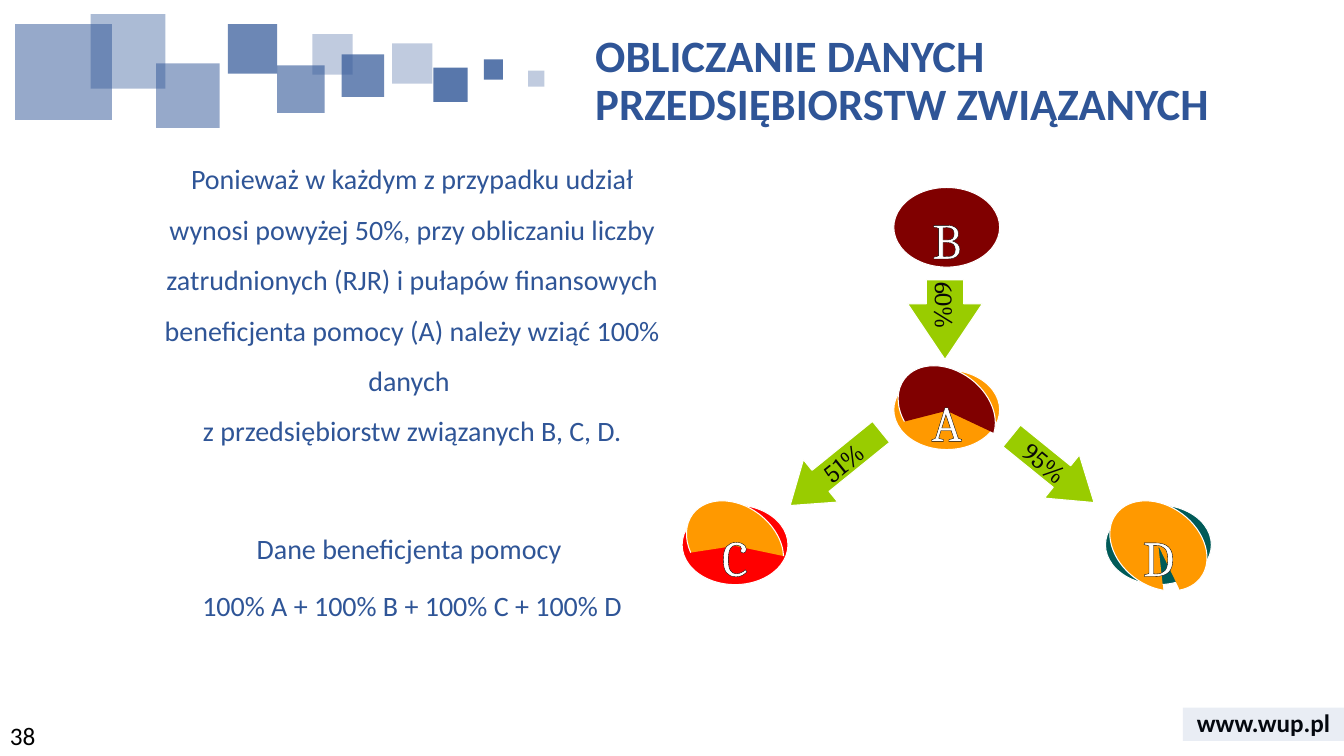
import math

import pptx
import pptx.dml.color
import pptx.enum.shapes
import pptx.enum.text
import pptx.oxml.ns
import pptx.util
from lxml import etree

CELL = pptx.util.Inches(0.1)  # the slide is a grid of tenth-inch cells
NAVY, LIME, AMBER, MAROON = "2F5597", "99CC00", "FF9900", "800000"
WHITE, BLACK = "FFFFFF", "000000"
SHAPES = pptx.enum.shapes.MSO_SHAPE
CENTER = pptx.enum.text.PP_ALIGN.CENTER
MIDDLE = pptx.enum.text.MSO_ANCHOR.MIDDLE
TOP = pptx.enum.text.MSO_ANCHOR.TOP
qn = pptx.oxml.ns.qn


def paint(fill, color):
    """Solid colour for a shape's, a line's or a font's fill."""
    fill.solid()
    fill.fore_color.rgb = pptx.dml.color.RGBColor.from_string(color)


def write(paragraph, text, size, color, face="Calibri", bold=False):
    run = paragraph.add_run()
    run.text = text
    run.font.size = pptx.util.Pt(size)
    run.font.name = face
    run.font.bold = bold
    paint(run.font.fill, color)
    return run


presentation = pptx.Presentation()
presentation.slide_width = int(133.33 * CELL)
presentation.slide_height = 75 * CELL
slide = presentation.slides.add_slide(presentation.slide_layouts[5])
shapes = slide.shapes

# Web address in the corner
address = shapes.add_textbox(*(int(v * CELL) for v in (117.35, 69.7, 16, 4)))
address.text_frame.word_wrap = True
address.text_frame.vertical_anchor = MIDDLE
paragraph = address.text_frame.paragraphs[0]
paragraph.alignment = CENTER
write(paragraph, "www.wup.pl", 18, BLACK, bold=True)

# Translucent squares and the address band: left, top, width, height, opacity
for *box, opacity in [
    (38.9, 4.3, 4, 4, 30), (43, 6.7, 3.4, 3.4, 80), (33.9, 5.4, 4.2, 4.2, 70),
    (1.5, 2.4, 9.6, 9.5, 50), (27.5, 6.5, 4.7, 4.7, 60), (15.5, 6.3, 6.3, 6.4, 50),
    (9, 1.4, 7.4, 7.4, 40), (48, 5.9, 1.9, 2, 80), (22.6, 2.4, 4.9, 4.9, 70),
    (31, 3.4, 4, 4, 30), (52.4, 7, 1.6, 1.6, 30), (117.35, 70.2, 16, 3.3, 10),
]:
    square = shapes.add_shape(SHAPES.RECTANGLE, *(int(v * CELL) for v in box))
    square.shadow.inherit = False
    paint(square.fill, NAVY)
    square.line.fill.background()
    rgb = square._element.spPr.find(qn("a:solidFill")).find(qn("a:srgbClr"))
    etree.SubElement(rgb, qn("a:alpha")).set("val", str(opacity * 1000))

# Title
title = shapes.title
title.left, title.top, title.width, title.height = (
    int(v * CELL) for v in (58.05, 2.85, 90.3, 7.9))
title.text_frame.vertical_anchor = TOP
title.text_frame.auto_size = pptx.enum.text.MSO_AUTO_SIZE.NONE
paragraph = title.text_frame.paragraphs[0]
paragraph.alignment = pptx.enum.text.PP_ALIGN.LEFT
paragraph.line_spacing = 0.9
write(paragraph, "OBLICZANIE DANYCH ", 32, NAVY, bold=True)
paragraph.add_line_break()
write(paragraph, "PRZEDSIĘBIORSTW ZWIĄZANYCH", 32, NAVY, bold=True)

# Explanation: space before, lines of the paragraph
body = shapes.add_textbox(*(int(v * CELL) for v in (14.1, 13.9, 53.6, 52)))
body.text_frame.word_wrap = True
for index, (space, lines) in enumerate([
    (0, ["Ponieważ w każdym z przypadku udział wynosi powyżej 50%, przy obliczaniu "
         "liczby zatrudnionych (RJR) i pułapów finansowych beneficjenta pomocy (A) "
         "należy wziąć 100% danych ",
         "z przedsiębiorstw związanych B, C, D."]),
    (48, ["Dane beneficjenta pomocy "]),
    (4.5, ["100% A + 100% B + 100% C + 100% D"]),
]):
    frame = body.text_frame
    paragraph = frame.add_paragraph() if index else frame.paragraphs[0]
    paragraph.alignment = CENTER
    paragraph.line_spacing = 1.5
    paragraph.space_before = pptx.util.Pt(space)
    for number, line in enumerate(lines):
        if number:
            paragraph.add_line_break()
        write(paragraph, line, 20, NAVY)

# Companies: centre, colour, owner's share as a colour and an arc in degrees
companies = {
    "A": (93.92, 40.65, AMBER, MAROON, 239, 15.5),
    "B": (93.92, 22.55, MAROON, None, 0, 0),
    "C": (72.92, 54.05, "FF0000", AMBER, 233.7, 31.9),
    "D": (114.92, 54.05, "005A58", AMBER, 305.4, -34.2),
}
LONG, SHORT = 10.5, 7.9
for x, y, color, share_color, start, end in companies.values():
    oval = shapes.add_shape(SHAPES.OVAL, int((x - LONG / 2) * CELL),
                            int((y - SHORT / 2) * CELL),
                            int(LONG * CELL), int(SHORT * CELL))
    oval.shadow.inherit = False
    paint(oval.fill, color)
    paint(oval.line.fill, WHITE)
    oval.line.width = pptx.util.Pt(0.75)
    if share_color is None:
        continue

    # Upright frame of the sector, turned as a whole
    left, top = int((x - SHORT / 2) * CELL), int((y + 0.1 - LONG / 2) * CELL)
    right, bottom = left + int(SHORT * CELL), top + int(LONG * CELL)
    builder = shapes.build_freeform(left, top)
    builder.add_line_segments([(right, top), (right, bottom)])
    sector = builder.convert_to_shape()
    sector.shadow.inherit = False
    sector.rotation = 307
    paint(sector.fill, share_color)
    paint(sector.line.fill, WHITE)
    sector.line.width = pptx.util.Pt(0.75)

    # One curve per quadrant, between the quarter turns the arc passes
    turns = [start, *(a for a in (270, 180, 90, 0) if end < a < start), end]
    rx, ry = (right - left) / 2, (bottom - top) / 2
    knots = [("moveTo", [(math.sin(math.radians(start)), math.cos(math.radians(start)))])]
    for a, b in zip(turns, turns[1:]):
        a, b = math.radians(a), math.radians(b)
        pull = 4 / 3 * math.tan((b - a) / 4)
        knots.append(("cubicBezTo", [
            (math.sin(a) + pull * math.cos(a), math.cos(a) - pull * math.sin(a)),
            (math.sin(b) - pull * math.cos(b), math.cos(b) + pull * math.sin(b)),
            (math.sin(b), math.cos(b))]))

    # Filled sector without a line, then its rim without a fill
    outlines = sector._element.spPr.find(qn("a:custGeom")).find(qn("a:pathLst"))
    outlines.clear()
    for option, steps in (
        ({"stroke": "0"}, knots + [("lnTo", [(0, 0)]), ("close", [])]),
        ({"fill": "none"}, knots),
    ):
        outline = etree.SubElement(outlines, qn("a:path"), w=str(right - left),
                                   h=str(bottom - top), **option)
        for command, points in steps:
            step = etree.SubElement(outline, qn("a:" + command))
            for u, v in points:
                etree.SubElement(step, qn("a:pt"), x=str(round(rx * (1 + u))),
                                 y=str(round(ry * (1 + v))))

# Ownership arrows
for text, kind, box, rotation, adjustments in [
    ("60%", SHAPES.RIGHT_ARROW, (89.8, 28, 7.9, 7.4), 90, (0.5, 0.744)),
    ("95%", SHAPES.RIGHT_ARROW, (99.2, 43.8, 10.5, 5.5), 39, (0.5, 0.744)),
    ("51%", SHAPES.LEFT_ARROW, (77.1, 43.8, 11.6, 5.4), 321, (0.497, 0.719)),
]:
    arrow = shapes.add_shape(kind, *(int(v * CELL) for v in box))
    arrow.shadow.inherit = False
    arrow.rotation = rotation
    for index, value in enumerate(adjustments):
        arrow.adjustments[index] = value
    paint(arrow.fill, LIME)
    paint(arrow.line.fill, WHITE)
    arrow.line.width = pptx.util.Pt(0.75)
    arrow.text_frame.word_wrap = False
    arrow.text_frame.vertical_anchor = MIDDLE
    paragraph = arrow.text_frame.paragraphs[0]
    paragraph.alignment = CENTER
    write(paragraph, text, 18, "080808", "Cambria")

# Outlined company letters
for letter in "BCDA":
    x, y = companies[letter][:2]
    label = shapes.add_textbox(int((x - 3.15) * CELL), int((y - 2.35) * CELL),
                               int(6.3 * CELL), int(4.7 * CELL))
    label.text_frame.word_wrap = False
    paragraph = label.text_frame.paragraphs[0]
    paragraph.alignment = CENTER
    run = write(paragraph, letter, 36, WHITE, "Cambria")
    edge = etree.Element(qn("a:ln"), w=str(pptx.util.Pt(0.75)))
    solid = etree.SubElement(edge, qn("a:solidFill"))
    etree.SubElement(solid, qn("a:srgbClr"), val=BLACK)
    run.font._element.insert(0, edge)

# Slide number
number_box = shapes.add_textbox(0, 71 * CELL, 30 * CELL, 4 * CELL)
number_box.text_frame.word_wrap = True
write(number_box.text_frame.paragraphs[0], "38", 18, BLACK)

presentation.save("out.pptx")
